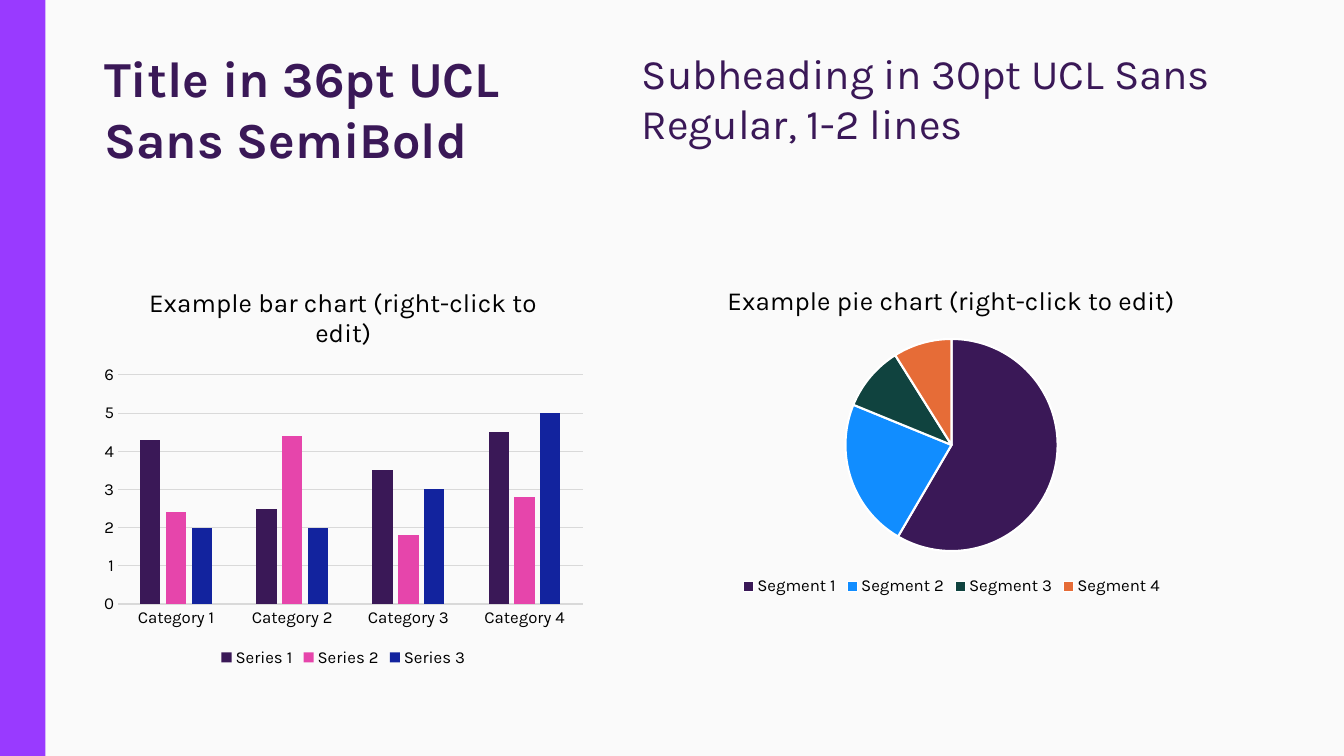
from dataclasses import dataclass

from lxml import etree
from pptx import Presentation
from pptx.chart.chart import Chart
from pptx.chart.data import CategoryChartData
from pptx.dml.color import RGBColor
from pptx.enum.chart import XL_CHART_TYPE, XL_LEGEND_POSITION, XL_TICK_MARK
from pptx.enum.shapes import MSO_SHAPE
from pptx.enum.text import MSO_ANCHOR, MSO_AUTO_SIZE, PP_ALIGN
from pptx.oxml.ns import qn
from pptx.slide import Slide
from pptx.util import Inches, Pt

COLUMN = XL_CHART_TYPE.COLUMN_CLUSTERED
PIE = XL_CHART_TYPE.PIE
BOTTOM = XL_LEGEND_POSITION.BOTTOM
NO_TICK = XL_TICK_MARK.NONE
RECTANGLE = MSO_SHAPE.RECTANGLE
TOP = MSO_ANCHOR.TOP
NO_AUTOSIZE = MSO_AUTO_SIZE.NONE
LEFT = PP_ALIGN.LEFT

BACKGROUND = RGBColor(0xFA, 0xFA, 0xFA)
VIOLET = RGBColor(0x99, 0x3A, 0xFF)
PURPLE = RGBColor(0x3A, 0x18, 0x57)
PINK = RGBColor(0xE6, 0x45, 0xAB)
NAVY = RGBColor(0x12, 0x23, 0x9E)
BLUE = RGBColor(0x11, 0x8D, 0xFF)
GREEN = RGBColor(0x10, 0x43, 0x3F)
ORANGE = RGBColor(0xE6, 0x6C, 0x37)
GREY = RGBColor(0xD9, 0xD9, 0xD9)
BLACK = RGBColor(0, 0, 0)
WHITE = RGBColor(255, 255, 255)

FONT = "Karla"
SLIDE_WIDTH = Inches(13.33)
SLIDE_HEIGHT = Inches(7.5)
STRIPE_WIDTH = 0.45 / 13.33


@dataclass(frozen=True)
class Box:
    left: float
    top: float
    width: float
    height: float

    def lengths(self) -> dict[str, int]:
        return {
            "left": round(SLIDE_WIDTH * self.left),
            "top": round(SLIDE_HEIGHT * self.top),
            "width": round(SLIDE_WIDTH * self.width),
            "height": round(SLIDE_HEIGHT * self.height),
        }


@dataclass(frozen=True)
class Heading:
    placeholder: int
    text: str
    box: Box
    size: int
    bold: bool
    line_spacing: float


@dataclass(frozen=True)
class ChartPanel:
    kind: int
    title: str
    box: Box
    categories: list[str]
    series: dict[str, list[float]]
    colors: list[RGBColor]


HEADINGS = [
    Heading(0, "Title in 36pt UCL Sans SemiBold",
            Box(0.07, 0.056, 0.371, 0.244), 36, True, 1.0),
    Heading(1, "Subheading in 30pt UCL Sans Regular, 1-2 lines",
            Box(0.47, 0.056, 0.472, 0.171), 30, False, 1.0),
]

PANELS = [
    ChartPanel(
        COLUMN, "Example bar chart (right-click to edit)",
        Box(0.07, 0.353, 0.371, 0.535),
        [f"Category {number}" for number in range(1, 5)],
        {
            "Series 1": [4.3, 2.5, 3.5, 4.5],
            "Series 2": [2.4, 4.4, 1.8, 2.8],
            "Series 3": [2, 2, 3, 5],
        },
        [PURPLE, PINK, NAVY],
    ),
    ChartPanel(
        PIE, "Example pie chart (right-click to edit)",
        Box(0.476, 0.353, 0.464, 0.441),
        [f"Segment {number}" for number in range(1, 5)],
        {"Series 1": [59, 23, 10, 9]},
        [PURPLE, BLUE, GREEN, ORANGE],
    ),
]


def apply_format(target: object, values: dict[str, object]) -> None:
    for name, value in values.items():
        setattr(target, name, value)


def format_font(font: object, size: float, color: RGBColor, bold: bool = False) -> None:
    apply_format(font, {"name": FONT, "size": Pt(size), "bold": bold})
    font.color.rgb = color


def add_stripe(slide: Slide) -> None:
    lengths = Box(0, 0, STRIPE_WIDTH, 1).lengths()
    stripe = slide.shapes.add_shape(RECTANGLE, **lengths)
    stripe.shadow.inherit = False
    stripe.fill.solid()
    stripe.fill.fore_color.rgb = VIOLET
    stripe.line.fill.background()


def fill_heading(slide: Slide, heading: Heading) -> None:
    shape = slide.placeholders[heading.placeholder]
    apply_format(shape, heading.box.lengths())
    frame = shape.text_frame
    frame.text = heading.text
    apply_format(frame, {"word_wrap": True, "auto_size": NO_AUTOSIZE, "vertical_anchor": TOP})
    paragraph = frame.paragraphs[0]
    apply_format(paragraph, {
        "alignment": LEFT, "line_spacing": heading.line_spacing, "space_before": Pt(0),
    })
    format_font(paragraph.runs[0].font, heading.size, PURPLE, heading.bold)


def format_columns(chart: Chart, colors: list[RGBColor]) -> None:
    plot = chart.plots[0]
    apply_format(plot, {"gap_width": 219, "overlap": -27, "vary_by_categories": False})
    for series, color in zip(plot.series, colors):
        series.format.fill.solid()
        series.format.fill.fore_color.rgb = color
    for axis in (chart.category_axis, chart.value_axis):
        apply_format(axis, {"major_tick_mark": NO_TICK, "minor_tick_mark": NO_TICK})
        format_font(axis.tick_labels.font, 12, BLACK)
    chart.value_axis.format.line.fill.background()
    chart.value_axis.has_major_gridlines = True
    for line in (chart.category_axis.format.line, chart.value_axis.major_gridlines.format.line):
        line.color.rgb = GREY
        line.width = Pt(0.75)


def format_pie(chart: Chart, colors: list[RGBColor]) -> None:
    plot = chart.plots[0]
    plot.vary_by_categories = True
    for index, color in enumerate(colors):
        segment = plot.series[0].points[index].format
        segment.fill.solid()
        segment.fill.fore_color.rgb = color
        segment.line.color.rgb = WHITE
        segment.line.width = Pt(1.5)


def add_panel(slide: Slide, panel: ChartPanel) -> None:
    data = CategoryChartData()
    data.categories = panel.categories
    for name, values in panel.series.items():
        data.add_series(name, values)
    lengths = panel.box.lengths()
    chart = slide.shapes.add_chart(
        panel.kind, lengths["left"], lengths["top"], lengths["width"], lengths["height"], data
    ).chart
    format_font(chart.font, 10, BLACK)
    chart.has_title = True
    frame = chart.chart_title.text_frame
    frame.text = panel.title
    format_font(frame.paragraphs[0].runs[0].font, 18.6, BLACK)
    chart.chart_title.include_in_layout = False
    chart.has_legend = True
    apply_format(chart.legend, {"position": BOTTOM, "include_in_layout": False})
    format_font(chart.legend.font, 12, BLACK)
    painter = format_columns if panel.kind == COLUMN else format_pie
    painter(chart, panel.colors)


def main() -> None:
    presentation = Presentation()
    apply_format(presentation, {"slide_width": SLIDE_WIDTH, "slide_height": SLIDE_HEIGHT})
    slide = presentation.slides.add_slide(presentation.slide_layouts[0])
    slide.background.fill.solid()
    slide.background.fill.fore_color.rgb = BACKGROUND
    add_stripe(slide)
    for heading in HEADINGS:
        fill_heading(slide, heading)
    for panel in PANELS:
        add_panel(slide, panel)
    presentation.save("out.pptx")


if __name__ == "__main__":
    main()
